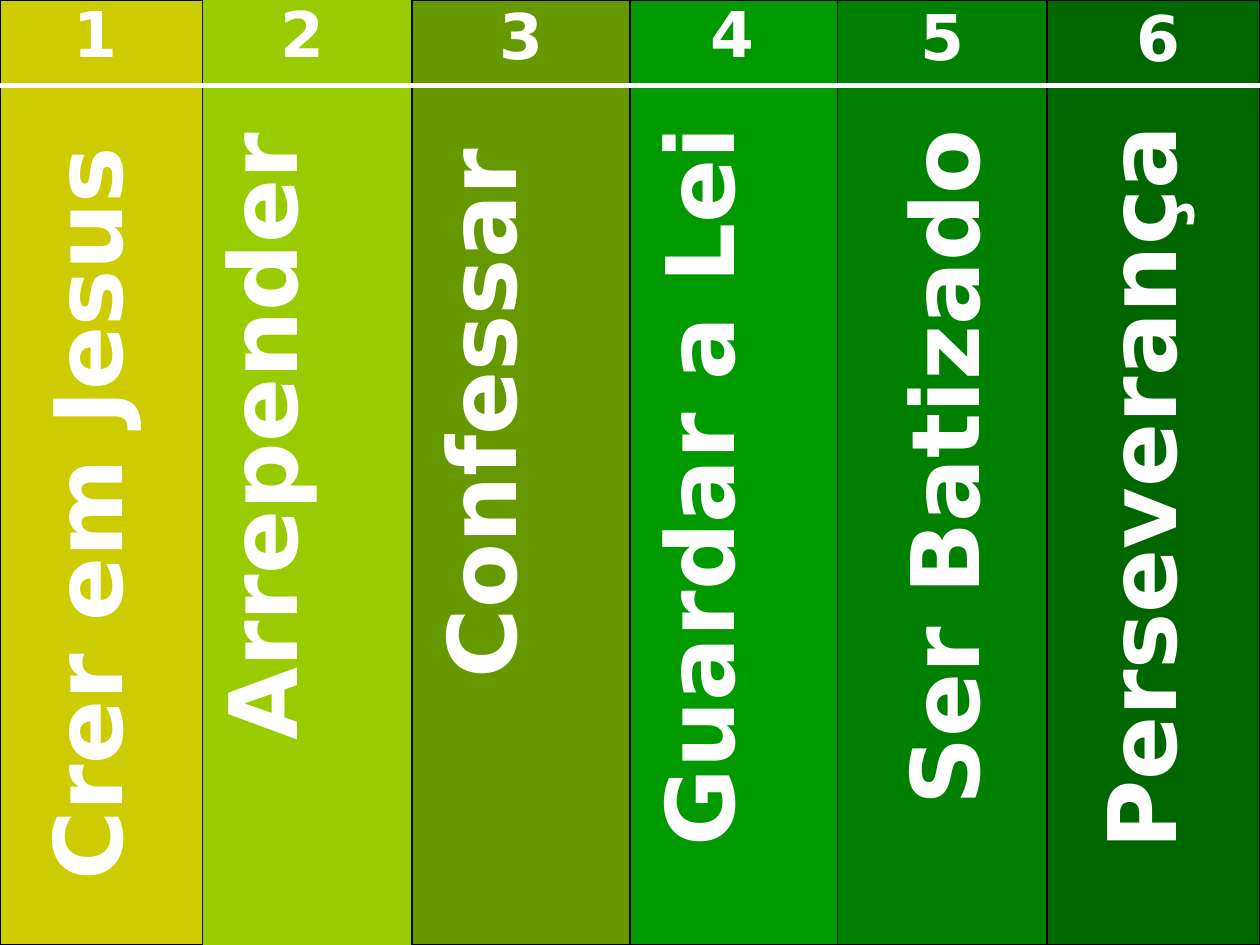
from collections import namedtuple

from lxml import etree
from pptx import Presentation
from pptx.dml.color import RGBColor
from pptx.enum.shapes import MSO_CONNECTOR, MSO_SHAPE
from pptx.enum.text import MSO_ANCHOR, PP_ALIGN
from pptx.oxml.ns import qn
from pptx.util import Inches, Pt

RECTANGLE = MSO_SHAPE.RECTANGLE
STRAIGHT = MSO_CONNECTOR.STRAIGHT
CENTER = PP_ALIGN.CENTER
TOP = MSO_ANCHOR.TOP

WHITE = RGBColor(0xFF, 0xFF, 0xFF)
BLACK = RGBColor(0x00, 0x00, 0x00)
MUSTARD = RGBColor(0xCC, 0xCC, 0x00)
LIME = RGBColor(0x99, 0xCC, 0x00)
OLIVE = RGBColor(0x66, 0x99, 0x00)
GREEN = RGBColor(0x00, 0x99, 0x00)
MID_GREEN = RGBColor(0x00, 0x80, 0x00)
DARK_GREEN = RGBColor(0x00, 0x66, 0x00)

# Grid of 100 columns by 75 rows on a 10 x 7.5 inch slide
COLUMNS, ROWS = 100, 75
RULE_ROW = 6.8
NUMBER_HEIGHT = 7

# number: left, top, width; label: centre column, centre row, length, depth
Step = namedtuple("Step", "label left color outlined number center size space")
STEPS = [
    Step("Crer em Jesus", 0, MUSTARD, True,
         (0.3, -0.9, 14.6), (6.75, 40.1), (66.7, 10), 28),
    Step("Arrepender", 16.1, LIME, False,
         (17.3, -0.9, 13.4), (22.65, 34.3), (53.5, 14), 16),
    Step("Confessar", 32.7, OLIVE, True,
         (34.7, -0.8, 13.4), (40, 32.8), (48.8, 14), None),
    Step("Guardar a Lei", 50, GREEN, True,
         (51, -0.9, 14.2), (57.3, 38.6), (62.2, 14), None),
    Step("Ser Batizado", 66.5, MID_GREEN, True,
         (67.7, -0.7, 14.2), (74.75, 37.1), (59.1, 10), None),
    Step("Perseverança", 83.1, DARK_GREEN, True,
         (83.9, -0.6, 16.1), (90.4, 38.7), (62.2, 10), None),
]


class StepsSlide:
    font_name = "DejaVu Sans"
    number_size = Pt(36)
    label_size = Pt(54)

    def __init__(self, deck):
        self.column = deck.slide_width / COLUMNS
        self.row = deck.slide_height / ROWS
        self.slide = deck.slides.add_slide(deck.slide_layouts[6])

    def place(self, left, top, width, height):
        return (round(left * self.column), round(top * self.row),
                round(width * self.column), round(height * self.row))

    def band(self, left, right, color, outlined):
        band = self.slide.shapes.add_shape(
            RECTANGLE, *self.place(left, 0, right - left, ROWS))
        band.shadow.inherit = False
        band.fill.solid()
        band.fill.fore_color.rgb = color
        if outlined:
            band.line.color.rgb = BLACK
            band.line.width = Pt(0.75)
        else:
            band.line.fill.background()

    def rule(self, left, right):
        x1, y, x2, _ = self.place(left, RULE_ROW, right, 0)
        rule = self.slide.shapes.add_connector(STRAIGHT, x1, y, x2, y)
        rule.line.color.rgb = WHITE
        rule.line.width = Pt(3)
        etree.SubElement(rule._element.spPr, qn("a:effectLst"))

    def text(self, words, box, size, rotation=0, space=None):
        holder = self.slide.shapes.add_textbox(*self.place(*box))
        holder.rotation = rotation
        frame = holder.text_frame
        frame.word_wrap = True
        frame.vertical_anchor = TOP
        paragraph = frame.paragraphs[0]
        paragraph.alignment = CENTER
        font = paragraph.font
        font.name, font.size, font.bold = self.font_name, size, True
        font.color.rgb = WHITE
        run = paragraph.add_run()
        run.text = words
        self.text_shadow(run)
        if space:
            gap = paragraph.add_run()
            gap.text = " "
            gap.font.size = Pt(space)

    def text_shadow(self, run):
        effects = etree.SubElement(run._r.get_or_add_rPr(), qn("a:effectLst"))
        shadow = etree.SubElement(effects, qn("a:outerShdw"), blurRad="0",
                                  dist="38100", dir="2700000", algn="tl")
        etree.SubElement(shadow, qn("a:srgbClr"), val=str(BLACK))

    def number(self, value, left, top, width):
        self.text(str(value), (left, top, width, NUMBER_HEIGHT),
                  self.number_size)

    def label(self, words, center, size, space):
        (x, y), (length, depth) = center, size
        self.text(words, (x - length / 2, y - depth / 2, length, depth),
                  self.label_size, 270, space)


def main():
    deck = Presentation()
    deck.slide_width, deck.slide_height = Inches(10), Inches(7.5)
    page = StepsSlide(deck)

    # Coloured bands, each reaching to the next one
    edges = [step.left for step in STEPS] + [COLUMNS]
    for step, right in zip(STEPS, edges[1:]):
        page.band(step.left, right, step.color, step.outlined)

    # White rule under the numbers
    page.rule(0, edges[1])
    page.rule(edges[1], COLUMNS)

    # Numbers on top, then the upright labels
    for value, step in enumerate(STEPS, start=1):
        page.number(value, *step.number)
    for step in STEPS:
        page.label(step.label, step.center, step.size, step.space)

    deck.save("out.pptx")


if __name__ == "__main__":
    main()
